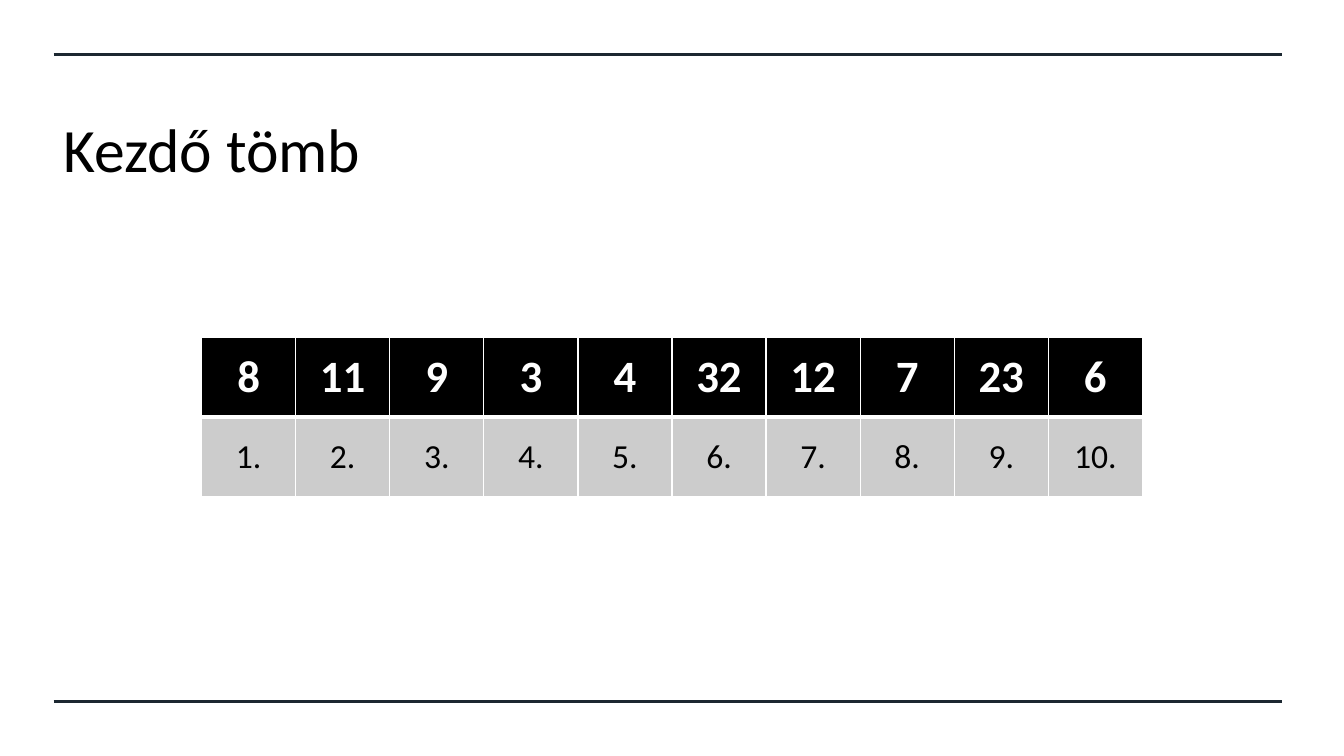
"""Build a slide that shows the starting array with its positions."""
from dataclasses import dataclass

from lxml.etree import SubElement
from pptx import Presentation
from pptx.dml.color import RGBColor
from pptx.enum.shapes import MSO_CONNECTOR
from pptx.enum.text import MSO_ANCHOR, PP_ALIGN
from pptx.oxml import parse_xml
from pptx.oxml.ns import nsdecls, qn
from pptx.util import Inches, Pt

TITLE = "Kezdő tömb"
VALUES = [8, 11, 9, 3, 4, 32, 12, 7, 23, 6]
POSITIONS = [f"{number}." for number in range(1, len(VALUES) + 1)]


@dataclass(frozen=True)
class Theme:
    font: str = "Calibri"
    rule: str = "1C2831"
    dark: str = "000000"
    light: str = "FFFFFF"
    grey: str = "CCCCCC"
    title_size: int = 44
    value_size: int = 32
    position_size: int = 24
    rule_width: float = 2.25
    border: int = 1
    header_border: int = 3


THEME = Theme()
WIDTH, HEIGHT = 13.33, 7.5
MARGIN = WIDTH * 0.04
RULE_END = 12.72
RULE_TOP = 0.54
TITLE_BOX = (MARGIN, 1.07, 11.63, 0.79)
TABLE_WIDTH = WIDTH * 0.7
TABLE_LEFT, TABLE_TOP = (WIDTH - TABLE_WIDTH) / 2, 3.35
ROW_HEIGHT = 0.79


def write_text(frame, text, size, color, bold=False, align=PP_ALIGN.LEFT):
    paragraph = frame.paragraphs[0]
    paragraph.alignment = align
    run = paragraph.add_run()
    run.text = str(text)
    run.font.name = THEME.font
    run.font.size = Pt(size)
    run.font.bold = bold
    run.font.color.rgb = RGBColor.from_string(color)


def add_rule(slide, top):
    rule = slide.shapes.add_connector(
        MSO_CONNECTOR.STRAIGHT, Inches(MARGIN), Inches(top), Inches(RULE_END), Inches(top)
    )
    rule.line.color.rgb = RGBColor.from_string(THEME.rule)
    rule.line.width = Pt(THEME.rule_width)
    SubElement(rule._element.spPr, qn("a:effectLst"))


def add_title(slide):
    title = slide.shapes.add_textbox(*map(Inches, TITLE_BOX))
    title.text_frame.word_wrap = True
    title.text_frame.vertical_anchor = MSO_ANCHOR.MIDDLE
    write_text(title.text_frame, TITLE, THEME.title_size, THEME.dark)


def set_borders(cell, widths):
    properties = cell._tc.get_or_add_tcPr()
    for index, (side, width) in enumerate(widths.items()):
        border = parse_xml(
            f'<a:ln{side} {nsdecls("a")} w="{Pt(width)}"><a:solidFill>'
            f'<a:srgbClr val="{THEME.light}"/></a:solidFill></a:ln{side}>'
        )
        properties.insert(index, border)


def add_array(slide):
    row_styles = [
        (VALUES, THEME.dark, THEME.border, THEME.header_border,
         dict(size=THEME.value_size, color=THEME.light, bold=True)),
        (POSITIONS, THEME.grey, THEME.header_border, THEME.border,
         dict(size=THEME.position_size, color=THEME.dark)),
    ]
    box = (TABLE_LEFT, TABLE_TOP, TABLE_WIDTH, ROW_HEIGHT * len(row_styles))
    table = slide.shapes.add_table(len(row_styles), len(VALUES), *map(Inches, box)).table
    for row, (texts, fill, top, bottom, text_format) in enumerate(row_styles):
        for column, text in enumerate(texts):
            cell = table.cell(row, column)
            cell.vertical_anchor = MSO_ANCHOR.MIDDLE
            cell.fill.solid()
            cell.fill.fore_color.rgb = RGBColor.from_string(fill)
            set_borders(cell, {"L": THEME.border, "R": THEME.border, "T": top, "B": bottom})
            write_text(cell.text_frame, text, align=PP_ALIGN.CENTER, **text_format)


def main():
    presentation = Presentation()
    presentation.slide_width = Inches(WIDTH)
    presentation.slide_height = Inches(HEIGHT)
    slide = presentation.slides.add_slide(presentation.slide_layouts[6])
    for top in (RULE_TOP, HEIGHT - RULE_TOP):
        add_rule(slide, top)
    add_title(slide)
    add_array(slide)
    presentation.save("out.pptx")


if __name__ == "__main__":
    main()
